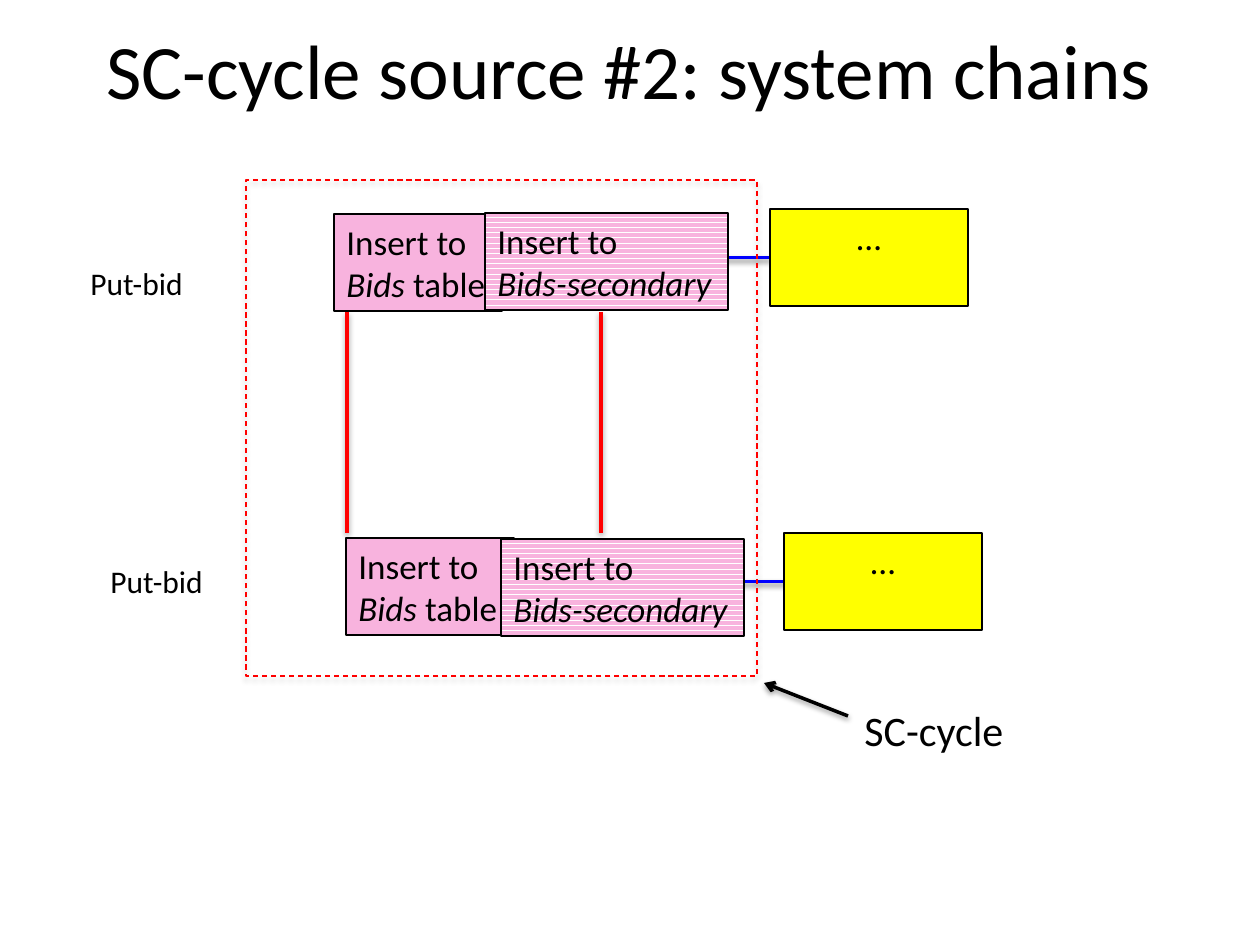
from lxml.etree import SubElement
from pptx import Presentation
from pptx.dml.color import RGBColor
from pptx.enum.dml import MSO_LINE, MSO_PATTERN
from pptx.enum.shapes import MSO_CONNECTOR, MSO_SHAPE
from pptx.enum.text import MSO_ANCHOR, MSO_AUTO_SIZE, PP_ALIGN
from pptx.oxml.ns import qn
from pptx.util import Emu, Pt

PX_PER_INCH = 126
FONT = "Calibri"
COLORS = {"text": "000000", "insert": "F8B3DE", "paper": "FFFFFF", "next": "FFFF00",
          "chain": "0000FF", "conflict": "FF0000"}
BOX_HEIGHT = 97


def px(length):
    return Emu(round(length * 914400 / PX_PER_INCH))


def color(key):
    return RGBColor.from_string(COLORS[key])


def add_shadow(part, alpha=38, distance=1.6):
    """Soft shadow straight below a part."""
    effects = SubElement(part._element.spPr, qn("a:effectLst"))
    shadow = SubElement(effects, qn("a:outerShdw"), blurRad=str(Pt(3.1)),
                        dist=str(Pt(distance)), dir="5400000", rotWithShape="0")
    black = SubElement(shadow, qn("a:srgbClr"), val=COLORS["text"])
    SubElement(black, qn("a:alpha"), val=str(alpha * 1000))


def write(part, paragraphs, size, align=PP_ALIGN.LEFT, wrap=False):
    """Each paragraph is a list of (text, italic) runs."""
    frame = part.text_frame
    frame.word_wrap = wrap
    frame.auto_size = MSO_AUTO_SIZE.SHAPE_TO_FIT_TEXT
    frame.vertical_anchor = MSO_ANCHOR.TOP
    for index, runs in enumerate(paragraphs):
        paragraph = frame.add_paragraph() if index else frame.paragraphs[0]
        paragraph.alignment = align
        for text, italic in runs:
            run = paragraph.add_run()
            run.text = text
            run.font.name = FONT
            run.font.size = Pt(size)
            run.font.italic = italic
            run.font.color.rgb = color("text")


def add_label(slide, left, top, width, height, text, size):
    label = slide.shapes.add_textbox(px(left), px(top), px(width), px(height))
    write(label, [[(text, False)]], size)


def add_box(slide, left, top, width, fill, paragraphs, striped=False, **text_options):
    box = slide.shapes.add_shape(MSO_SHAPE.RECTANGLE, px(left), px(top),
                                 px(width), px(BOX_HEIGHT))
    if striped:
        box.fill.patterned()
        box.fill.pattern = MSO_PATTERN.DARK_HORIZONTAL
        box.fill.fore_color.rgb = color(fill)
        box.fill.back_color.rgb = color("paper")
    else:
        box.fill.solid()
        box.fill.fore_color.rgb = color(fill)
    box.line.color.rgb = color("text")
    box.line.width = Pt(0.75)
    box.shadow.inherit = False
    write(box, paragraphs, 20, **text_options)
    return box


def add_line(slide, start, end, line_color):
    line = slide.shapes.add_connector(MSO_CONNECTOR.STRAIGHT, *map(px, start + end))
    line.line.color.rgb = color(line_color)
    line.line.width = Pt(2)
    add_shadow(line)
    return line


def add_title(slide, left, top, width, height):
    title = slide.shapes.title
    title.left, title.top, title.width, title.height = map(px, (left, top, width, height))
    frame = title.text_frame
    frame.vertical_anchor = MSO_ANCHOR.MIDDLE
    paragraph = frame.paragraphs[0]
    paragraph.alignment = PP_ALIGN.CENTER
    run = paragraph.add_run()
    run.text = "SC-cycle source #2: system chains"
    run.font.name = FONT
    run.font.size = Pt(44)
    run.font.color.rgb = color("text")


def add_transaction(slide, left, top, label_at, secondary_at, next_at):
    """One Put-bid chain; the offsets count from the corner of its first box."""
    table_width = 168
    # Chain line, running behind the boxes to the next step
    middle = top + next_at[1] + BOX_HEIGHT / 2
    chain = add_line(slide, (left + table_width / 2, middle),
                     (left + next_at[0], middle), "chain")
    # Steps of the chain
    add_box(slide, left, top, table_width, "insert",
            [[("Insert to", False)], [("Bids ", True), ("table", False)]])
    next_step = add_box(slide, left + next_at[0], top + next_at[1], 198, "next",
                        [[("…", False)]], align=PP_ALIGN.CENTER, wrap=True)
    chain.end_connect(next_step, 1)
    add_box(slide, left + secondary_at[0], top + secondary_at[1], 243, "insert",
            [[("Insert to", False)], [("Bids-secondary", True)]], striped=True)
    # Name of the transaction
    add_label(slide, left + label_at[0], top + label_at[1], 120, 50, "Put-bid", 18)


def add_conflicts(slide, left, top, width, height):
    for x in (left, left + width):
        add_line(slide, (x, top), (x, top + height), "conflict")


def add_cycle(slide, left, top, width, height):
    # Dashed frame
    frame = slide.shapes.add_shape(MSO_SHAPE.RECTANGLE, *map(px, (left, top, width, height)))
    frame.fill.background()
    frame.line.color.rgb = color("conflict")
    frame.line.width = Pt(0.75)
    frame.line.dash_style = MSO_LINE.DASH
    add_shadow(frame, alpha=35, distance=1.8)
    # Arrow and name at its lower right corner
    right, bottom = left + width, top + height
    pointer = add_line(slide, (right + 91, bottom + 40), (right + 7, bottom + 7), "text")
    SubElement(pointer.line._get_or_add_ln(), qn("a:tailEnd"), type="arrow")
    add_label(slide, right + 95, bottom + 22, 166, 63, "SC-cycle", 24)


def main():
    deck = Presentation()
    deck.slide_width, deck.slide_height = px(1260), px(945)
    slide = deck.slides.add_slide(deck.slide_layouts[5])
    add_title(slide, 55, 1, 1149, 136)
    add_transaction(slide, 346, 538, label_at=(-248, 18),
                    secondary_at=(155, 1), next_at=(438, -5))
    add_transaction(slide, 334, 214, label_at=(-256, 44),
                    secondary_at=(151, -1), next_at=(436, -5))
    add_conflicts(slide, 347, 312, 254, 221)
    add_cycle(slide, 246, 180, 511, 496)
    deck.save("out.pptx")


if __name__ == "__main__":
    main()
